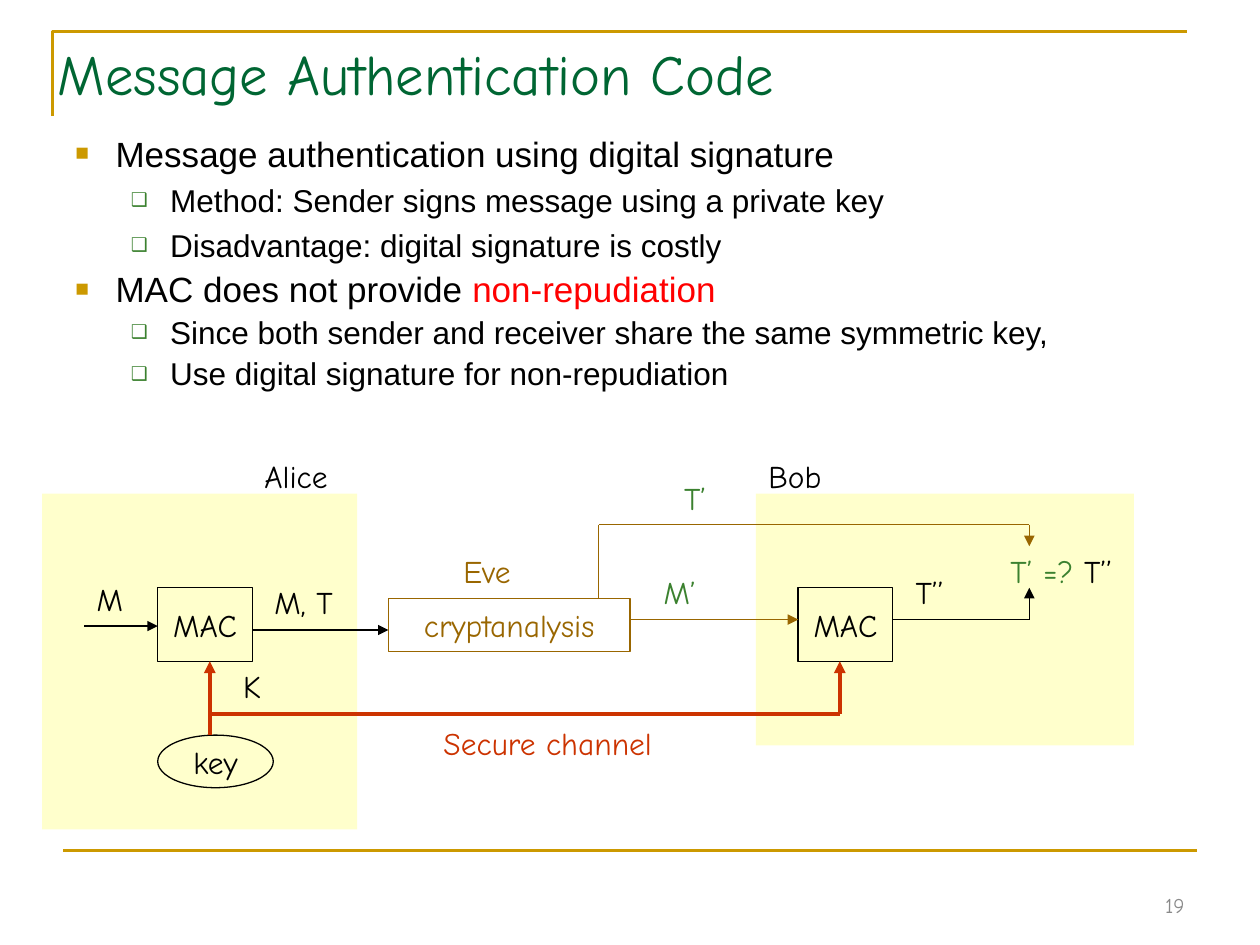
from lxml import etree
from pptx import Presentation
from pptx.dml.color import RGBColor
from pptx.enum.shapes import MSO_CONNECTOR, MSO_SHAPE
from pptx.enum.text import MSO_ANCHOR, MSO_AUTO_SIZE, PP_ALIGN
from pptx.oxml.ns import qn
from pptx.util import Cm, Pt

RECT, OVAL = MSO_SHAPE.RECTANGLE, MSO_SHAPE.OVAL
STRAIGHT = MSO_CONNECTOR.STRAIGHT
LEFT, CENTER, RIGHT = PP_ALIGN.LEFT, PP_ALIGN.CENTER, PP_ALIGN.RIGHT
MIDDLE, BOTTOM = MSO_ANCHOR.MIDDLE, MSO_ANCHOR.BOTTOM
NO_FIT = MSO_AUTO_SIZE.NONE

HAND, BODY = "Comic Neue", "Arial"
BLACK, GOLD, BROWN, RUST = "000000", "CC9900", "996600", "CC3300"
GREEN, DARK_GREEN, CREAM, RED, GRAY = "3B812F", "006633", "FFFFCC", "FF0000", "898989"


def paint(target, color):
    if hasattr(target, "solid"):
        target.solid()
        target.fore_color.rgb = RGBColor.from_string(color)
    else:
        target.color.rgb = RGBColor.from_string(color)


def style(paragraph, colors, size=18, font=HAND, align=LEFT):
    paragraph.alignment = align
    for run, color in zip(paragraph.runs, colors):
        run.font.name = font
        run.font.size = Pt(size)
        paint(run.font, color)


prs = Presentation()
prs.slide_width, prs.slide_height = Cm(25.4), Cm(19.05)
slide = prs.slides.add_slide(prs.slide_layouts[5])
shapes = slide.shapes

corner = shapes.build_freeform(Cm(1.06), Cm(2.34))
corner.add_line_segments([(Cm(1.06), Cm(0.64)), (Cm(23.92), Cm(0.64))], close=False)
frame_rule = corner.convert_to_shape()
frame_rule.shadow.inherit = False
frame_rule.fill.background()
paint(frame_rule.line.fill, GOLD)
frame_rule.line.width = Pt(1.5)

title = shapes.title
title.left, title.top, title.width, title.height = Cm(0.91), Cm(0.74), Cm(21.59), Cm(1.47)
title.text_frame.text = "Message Authentication Code"
title.text_frame.auto_size = NO_FIT
title.text_frame.vertical_anchor = MIDDLE
style(title.text_frame.paragraphs[0], [DARK_GREEN], 32.4)

levels = [
    {"size": 20, "margin": 0.81, "hang": 0.81, "bullet": "■", "color": GOLD, "scale": 65},
    {"size": 18, "margin": 1.91, "hang": 0.79, "bullet": "❑", "color": GREEN, "scale": 60},
]
points = [
    (0, 1, ["Message authentication using digital signature"]),
    (1, 1, ["Method: Sender signs message using a private key"]),
    (1, 1, ["Disadvantage: digital signature is costly"]),
    (0, 0.9, ["MAC does not provide ", "non-repudiation"]),
    (1, 0.9, ["Since both sender and receiver share the same symmetric key,"]),
    (1, 0.9, ["Use digital signature for non-repudiation"]),
]
body = shapes.add_textbox(Cm(1.27), Cm(2.54), Cm(23.5), Cm(6.35)).text_frame
body.word_wrap = True
for index, (level, spacing, parts) in enumerate(points):
    look = levels[level]
    point = body.add_paragraph() if index else body.paragraphs[0]
    for part in parts:
        point.add_run().text = part
    style(point, [BLACK, RED], look["size"], BODY)
    point.level = level
    point.line_spacing = spacing
    point.space_before = Pt(look["size"] * 0.23)
    props = point._p.get_or_add_pPr()
    props.set("marL", str(Cm(look["margin"])))
    props.set("indent", str(-Cm(look["hang"])))
    bullet_color = etree.SubElement(props, qn("a:buClr"))
    etree.SubElement(bullet_color, qn("a:srgbClr"), val=look["color"])
    etree.SubElement(props, qn("a:buSzPct"), val=str(look["scale"] * 1000))
    etree.SubElement(props, qn("a:buFont"), typeface=BODY)
    etree.SubElement(props, qn("a:buChar"), char=look["bullet"])

blocks = [
    (RECT, 15.24, 9.95, 7.62, 5.08, CREAM, None, ""),
    (RECT, 0.85, 9.95, 6.35, 6.77, CREAM, None, ""),
    (RECT, 3.18, 11.85, 1.91, 1.48, None, BLACK, "MAC"),
    (RECT, 16.09, 11.85, 1.91, 1.48, None, BLACK, "MAC"),
    (RECT, 7.83, 12.07, 4.87, 1.06, None, BROWN, "cryptanalysis"),
    (OVAL, 3.18, 14.82, 2.33, 1.06, None, BLACK, "key"),
]
for kind, x, y, width, height, fill, ink, text in blocks:
    block = shapes.add_shape(kind, Cm(x), Cm(y), Cm(width), Cm(height))
    block.shadow.inherit = False
    if fill:
        paint(block.fill, fill)
        block.line.fill.background()
    else:
        block.fill.background()
        paint(block.line.fill, ink)
        block.line.width = Pt(0.75)
        block.text_frame.text = text
        block.text_frame.word_wrap = False
        block.text_frame.vertical_anchor = MIDDLE
        style(block.text_frame.paragraphs[0], [ink], align=CENTER)

links = [
    (1.27, 17.15, 24.13, 17.15, GOLD, 1.5, False),
    (1.7, 12.62, 3.18, 12.62, BLACK, 0.75, True),
    (5.08, 12.7, 7.83, 12.7, BLACK, 0.75, True),
    (12.7, 12.49, 16.09, 12.49, BROWN, 0.75, True),
    (12.07, 12.07, 12.07, 10.58, BROWN, 0.75, False),
    (12.07, 10.58, 20.75, 10.58, BROWN, 0.75, False),
    (20.75, 10.58, 20.75, 11.01, BROWN, 0.75, True),
    (18, 12.49, 20.75, 12.49, BLACK, 0.75, False),
    (20.75, 12.49, 20.75, 11.85, BLACK, 0.75, True),
    (4.23, 14.82, 4.23, 13.33, RUST, 2.25, True),
    (4.23, 14.39, 16.93, 14.39, RUST, 2.25, False),
    (16.93, 14.39, 16.93, 13.33, RUST, 2.25, True),
]
for x1, y1, x2, y2, color, weight, arrow in links:
    link = shapes.add_connector(STRAIGHT, Cm(x1), Cm(y1), Cm(x2), Cm(y2))
    paint(link.line.fill, color)
    link.line.width = Pt(weight)
    if arrow:
        etree.SubElement(link.line._get_or_add_ln(), qn("a:tailEnd"), type="triangle")
    etree.SubElement(link._element.spPr, qn("a:effectLst"))

labels = [
    (1.7, 11.56, 1.07, [("M", BLACK)]),
    (5.28, 11.63, 1.88, [("M, T", BLACK)]),
    (4.65, 13.33, 0.89, [("K", BLACK)]),
    (8.69, 14.48, 5, [("Secure channel", RUST)]),
    (5.08, 9.09, 2.01, [("Alice", BLACK)]),
    (15.24, 9.09, 1.63, [("Bob", BLACK)]),
    (9.09, 11, 1.57, [("Eve", BROWN)]),
    (13.13, 11.43, 1.19, [("M’", GREEN)]),
    (18.21, 11.43, 1.17, [("T’’", BLACK)]),
    (13.54, 9.53, 1.07, [("T’", GREEN)]),
    (20.12, 11, 2.97, [("T’ =? ", GREEN), ("T’’", BLACK)]),
]
for x, y, width, parts in labels:
    label = shapes.add_textbox(Cm(x), Cm(y), Cm(width), Cm(1.02)).text_frame
    label.word_wrap = False
    for text, color in parts:
        label.paragraphs[0].add_run().text = text
    style(label.paragraphs[0], [color for text, color in parts])

page_number = shapes.add_textbox(Cm(18.21), Cm(17.35), Cm(5.92), Cm(1.27)).text_frame
page_number.text = "19"
page_number.word_wrap = True
page_number.vertical_anchor = BOTTOM
style(page_number.paragraphs[0], [GRAY], 12, align=RIGHT)

prs.save("out.pptx")
